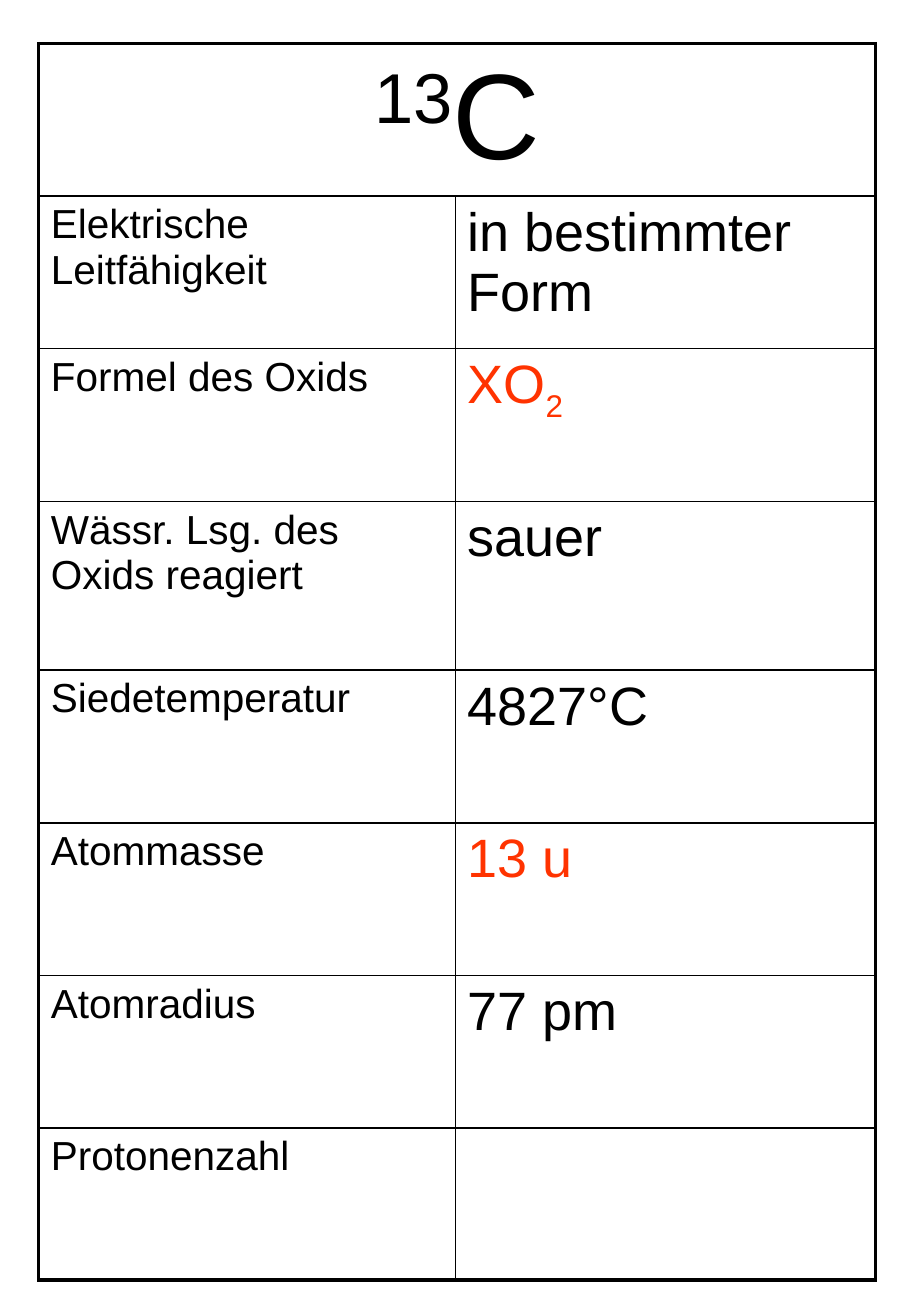
from lxml.etree import SubElement
from pptx import Presentation
from pptx.dml.color import RGBColor
from pptx.enum.text import PP_ALIGN as Align
from pptx.oxml import parse_xml
from pptx.oxml.ns import nsdecls, qn
from pptx.util import Cm, Pt

BLACK = RGBColor(0x00, 0x00, 0x00)
RED = RGBColor(0xFF, 0x33, 0x00)
OUTER_LINE, INNER_LINE = Pt(2.25), Pt(1)
TITLE_SIZE, LABEL_SIZE, VALUE_SIZE = Pt(72), Pt(24), Pt(32)
SUPERSCRIPT, SUBSCRIPT = 30, -25

COLUMN_WIDTHS = [8.71, 8.79]
ROW_HEIGHTS = [3.19, 3.19, 3.19, 3.53, 3.19, 3.19, 3.19, 3.18]

# Each text is a list of (wording, baseline shift in percent).
ISOTOPE = [("13", SUPERSCRIPT), ("C", 0)]
PROPERTIES = [
    ("Elektrische Leitfähigkeit", [("in bestimmter Form", 0)], BLACK),
    ("Formel des Oxids", [("XO", 0), ("2", SUBSCRIPT)], RED),
    ("Wässr. Lsg. des Oxids reagiert", [("sauer", 0)], BLACK),
    ("Siedetemperatur", [("4827°C", 0)], BLACK),
    ("Atommasse", [("13 u", 0)], RED),
    ("Atomradius", [("77 pm", 0)], BLACK),
    ("Protonenzahl", [], BLACK),
]


def write_cell(cell, parts, size, color=BLACK, align=Align.LEFT):
    para = cell.text_frame.paragraphs[0]
    para.alignment = align
    for wording, shift in parts:
        span = para.add_run()
        span.text = wording
        for name, value in {"name": "Arial", "size": size}.items():
            setattr(span.font, name, value)
        span.font.color.rgb = color
        if shift:
            span._r.get_or_add_rPr().set("baseline", str(shift * 1000))


def set_borders(cell, widths):
    """Draw left, right, top and bottom borders, which precede the fill in the XML."""
    properties = cell._tc.get_or_add_tcPr()
    for index, (side, width) in enumerate(zip("LRTB", widths)):
        line = parse_xml(f'<a:ln{side} {nsdecls("a")} w="{width}"/>')
        fill = SubElement(line, qn("a:solidFill"))
        SubElement(fill, qn("a:srgbClr"), val=str(BLACK))
        properties.insert(index, line)


def frame_table(table):
    """Use a thick line around the table and thin lines inside it."""
    last_row, last_column = len(table.rows) - 1, len(table.columns) - 1
    for row in range(last_row + 1):
        for column in range(last_column + 1):
            cell = table.cell(row, column)
            cell.fill.background()
            merged = row == 0
            on_edge = (column == 0, merged or column == last_column,
                       row == 0, row == last_row)
            set_borders(cell, [OUTER_LINE if edge else INNER_LINE for edge in on_edge])


def add_element_card(page, left, top):
    box = (left, top, Cm(sum(COLUMN_WIDTHS)), Cm(sum(ROW_HEIGHTS)))
    table = page.shapes.add_table(len(ROW_HEIGHTS), len(COLUMN_WIDTHS), *box).table
    for name in ("first_row", "horz_banding"):
        setattr(table, name, False)
    for column, width in zip(table.columns, COLUMN_WIDTHS):
        column.width = Cm(width)
    for row, height in zip(table.rows, ROW_HEIGHTS):
        row.height = Cm(height)

    title = table.cell(0, 0)
    title.merge(table.cell(0, 1))
    write_cell(title, ISOTOPE, TITLE_SIZE, align=Align.CENTER)
    for row, (label, value, color) in enumerate(PROPERTIES, start=1):
        write_cell(table.cell(row, 0), [(label, 0)], LABEL_SIZE)
        write_cell(table.cell(row, 1), value, VALUE_SIZE, color)
    frame_table(table)


def main():
    deck = Presentation()
    deck.slide_width, deck.slide_height = Cm(19.05), Cm(27.51)
    page = deck.slides.add_slide(deck.slide_layouts[6])
    add_element_card(page, Cm(0.81), Cm(0.91))
    deck.save("out.pptx")


if __name__ == "__main__":
    main()
